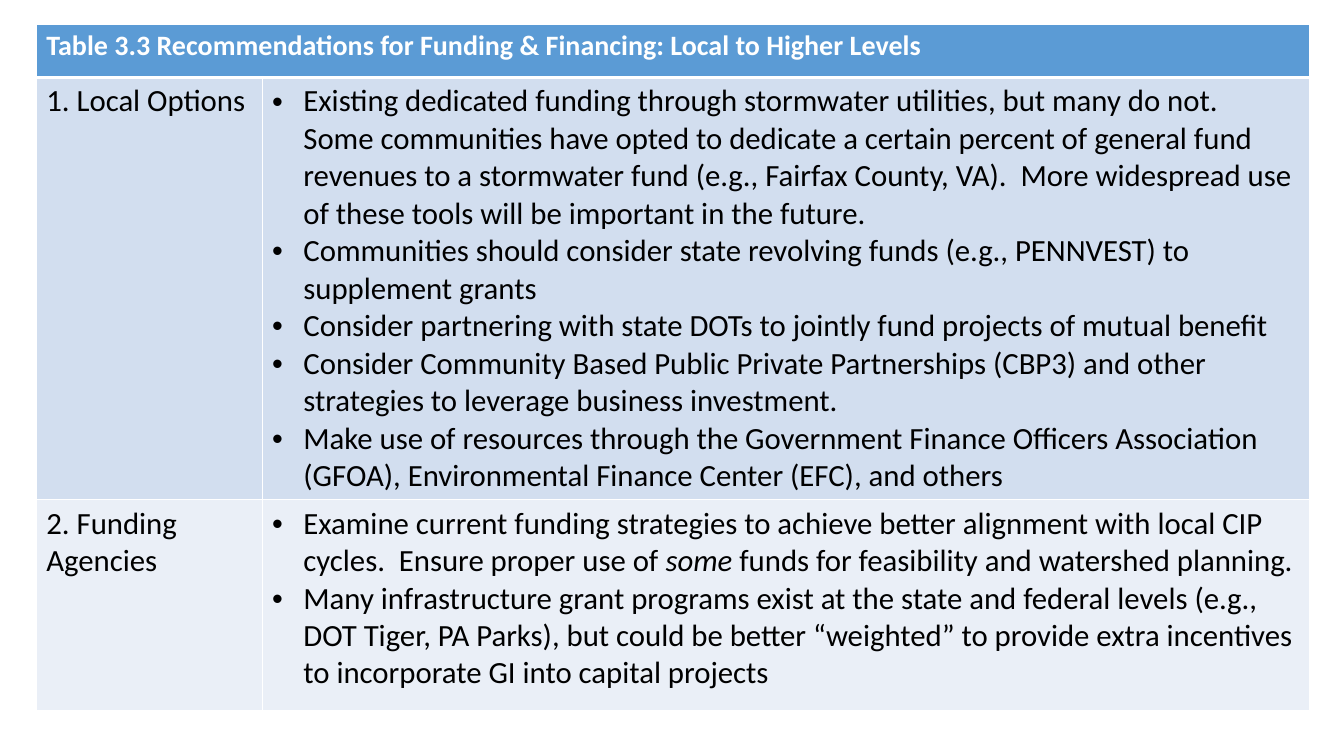
from lxml.etree import SubElement
from pptx import Presentation
from pptx.dml.color import RGBColor
from pptx.oxml.ns import qn
from pptx.util import Inches, Pt

BLUE, PALE, PALEST = "5B9BD5", "D2DEEF", "EAEFF7"
WHITE, BLACK = "FFFFFF", "000000"

TITLE = "Table 3.3 Recommendations for Funding & Financing: Local to Higher Levels"
# Each bullet is a list of text runs; every second run is italic.
LOCAL_OPTIONS = [
    ["Existing dedicated funding through stormwater utilities, but many do not.  "
     "Some communities have opted to dedicate a certain percent of general fund "
     "revenues to a stormwater fund (e.g., Fairfax County, VA).  More widespread "
     "use of these tools will be important in the future."],
    ["Communities should consider state revolving funds (e.g., PENNVEST) to "
     "supplement grants"],
    ["Consider partnering with state DOTs to jointly fund projects of mutual benefit"],
    ["Consider Community Based Public Private Partnerships (CBP3) and other "
     "strategies to leverage business investment."],
    ["Make use of resources through the Government Finance Officers Association "
     "(GFOA), Environmental Finance Center (EFC), and others"],
]
FUNDING_AGENCIES = [
    ["Examine current funding strategies to achieve better alignment with local "
     "CIP cycles.  Ensure proper use of ", "some ",
     "funds for feasibility and watershed planning."],
    ["Many infrastructure grant programs exist at the state and federal levels "
     "(e.g., DOT Tiger, PA Parks), but could be better “weighted” to provide extra "
     "incentives to incorporate GI into capital projects"],
]
ROWS = [
    ("1. Local Options", LOCAL_OPTIONS, PALE),
    ("2. Funding Agencies", FUNDING_AGENCIES, PALEST),
]


def rgb(color):
    return RGBColor.from_string(color)


class TableSlide:
    font = "Calibri"
    indent = Inches(0.31)

    def __init__(self, prs):
        self.slide = prs.slides.add_slide(prs.slide_layouts[6])

    def table(self, left, top, widths, heights):
        frame = self.slide.shapes.add_table(
            len(heights), len(widths), Inches(left), Inches(top),
            Inches(sum(widths)), Inches(sum(heights)))
        table = frame.table
        for column, width in zip(table.columns, widths):
            column.width = Inches(width)
        for row, height in zip(table.rows, heights):
            row.height = Inches(height)
        return table

    def cell(self, cell, fill, bottom=1):
        """Give the cell white borders and a solid fill."""
        props = cell._tc.get_or_add_tcPr()
        for side, width in (("L", 1), ("R", 1), ("T", 1), ("B", bottom)):
            line = SubElement(props, qn(f"a:ln{side}"), w=str(Pt(width)))
            solid = SubElement(line, qn("a:solidFill"))
            SubElement(solid, qn("a:srgbClr"), val=WHITE)
        cell.fill.solid()
        cell.fill.fore_color.rgb = rgb(fill)

    def style(self, p, size=22, color=BLACK, bold=False):
        for r in p.runs:
            r.font.name = self.font
            r.font.size = Pt(size)
            r.font.bold = bold
            r.font.color.rgb = rgb(color)

    def label(self, cell, text, **look):
        cell.text_frame.text = text
        self.style(cell.text_frame.paragraphs[0], **look)

    def bullets(self, cell, items):
        tf = cell.text_frame
        for i, runs in enumerate(items):
            p = tf.add_paragraph() if i else tf.paragraphs[0]
            for j, text in enumerate(runs):
                r = p.add_run()
                r.text = text
                r.font.italic = j % 2 == 1
            self.style(p)
            props = p._p.get_or_add_pPr()
            props.set("marL", str(self.indent))
            props.set("indent", str(-self.indent))
            SubElement(props, qn("a:buFont"), typeface="Arial")
            SubElement(props, qn("a:buChar"), char="•")


def main():
    prs = Presentation()
    prs.slide_width, prs.slide_height = Inches(13.33), Inches(7.5)
    s = TableSlide(prs)

    table = s.table(0.36, 0.24, widths=[2.24, 10.39], heights=[0.53, 4.18, 2.09])
    header = table.cell(0, 0)
    header.merge(table.cell(0, 1))
    for cell in table.rows[0].cells:
        s.cell(cell, BLUE, bottom=3)
    s.label(header, TITLE, size=20, color=WHITE, bold=True)

    for i, (name, items, fill) in enumerate(ROWS, start=1):
        for cell in table.rows[i].cells:
            s.cell(cell, fill)
        s.label(table.cell(i, 0), name)
        s.bullets(table.cell(i, 1), items)

    prs.save("out.pptx")


if __name__ == "__main__":
    main()
